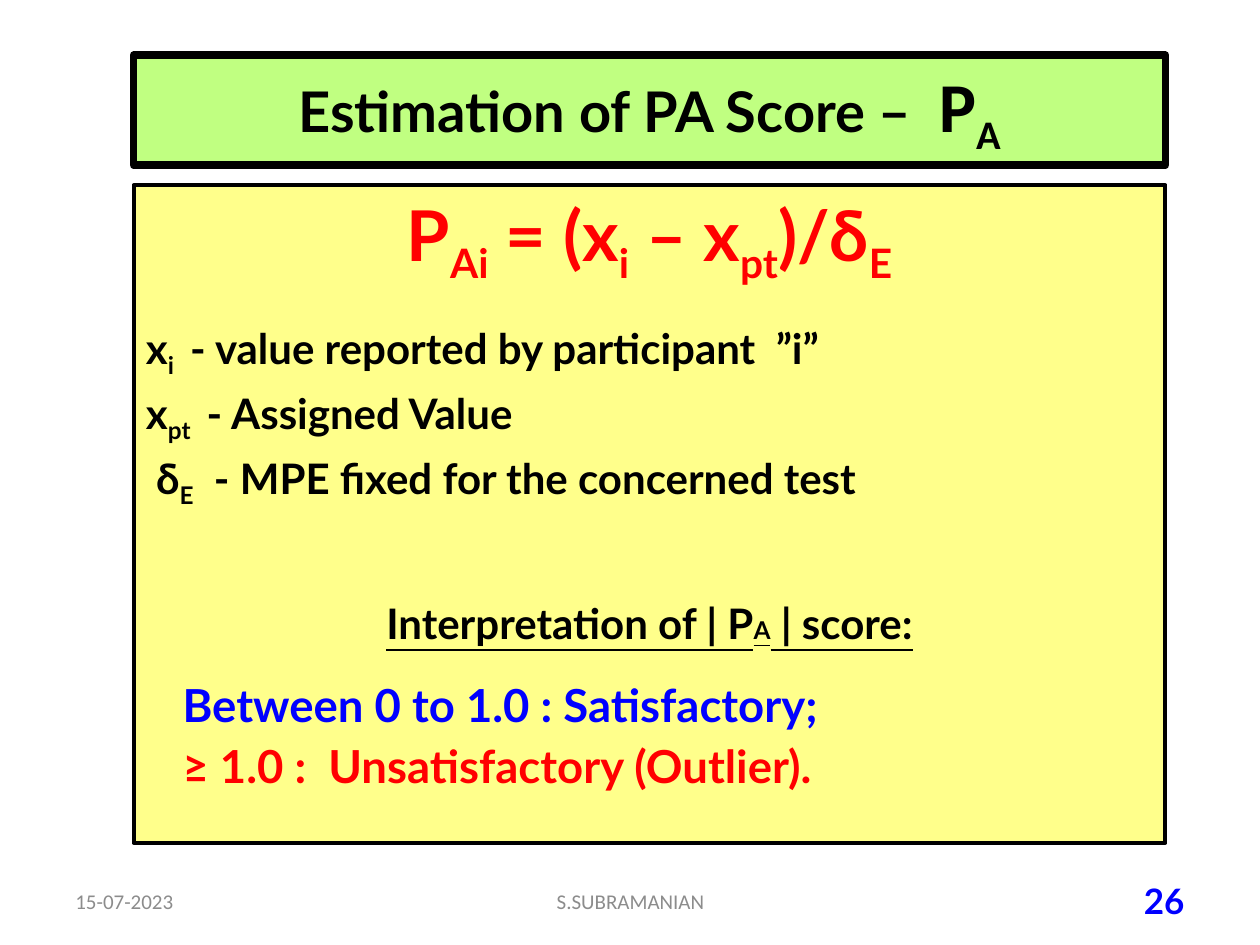
from pptx import Presentation
from pptx import util as u
from pptx.dml.color import RGBColor
from pptx.enum import shapes, text

BLACK, RED, BLUE, GREY = "000000", "FF0000", "0000FF", "8C8C8C"
LEFT, CENTER, RIGHT = text.PP_ALIGN.LEFT, text.PP_ALIGN.CENTER, text.PP_ALIGN.RIGHT


def color(hex_value):
    return RGBColor.from_string(hex_value)


class SlideBuilder:
    """Holds the text style and the current slide."""
    font = "Lato"

    def __init__(self, slide):
        self.slide = slide

    def panel(self, left, top, width, height, fill, line_width):
        shape = self.slide.shapes.add_shape(
            shapes.MSO_SHAPE.RECTANGLE,
            *(u.Inches(v) for v in (left, top, width, height)))
        shape.shadow.inherit = False
        shape.fill.solid()
        shape.fill.fore_color.rgb = color(fill)
        shape.line.color.rgb = color(BLACK)
        shape.line.width = u.Pt(line_width)
        return shape.text_frame

    def label(self, left, width, words, align, **style):
        box = self.slide.shapes.add_textbox(
            u.Inches(left), u.Inches(6.95), u.Inches(width), u.Inches(0.4))
        frame = box.text_frame
        frame.word_wrap = True
        frame.vertical_anchor = text.MSO_ANCHOR.MIDDLE
        self.paragraph(frame, align, [words], **style)

    def paragraph(self, frame, align, parts, before=0, line=None, indent=0, **style):
        """Add a paragraph; each part is a string or a (string, style) pair."""
        first = frame.paragraphs[0]
        para = frame.add_paragraph() if first.runs else first
        para.alignment = align
        para.space_before = u.Pt(before)
        if line:
            para.line_spacing = u.Pt(line)
        if indent:
            para._p.get_or_add_pPr().set("marL", str(u.Inches(indent)))
        for part in parts:
            words, changes = (part, {}) if isinstance(part, str) else part
            self.run(para, words, **{**style, **changes})

    def run(self, para, words, size, ink=BLACK, bold=True, font=None,
            underline=False, sub=False):
        run = para.add_run()
        run.text = words
        run.font.name = font or self.font
        run.font.size = u.Pt(size)
        run.font.bold = bold
        run.font.color.rgb = color(ink)
        if underline:
            run.font.underline = True
        if sub:
            run._r.get_or_add_rPr().set("baseline", "-25000")


def sub(words):
    return words, {"sub": True}


def main():
    prs = Presentation()
    prs.slide_width, prs.slide_height = u.Inches(10), u.Inches(7.5)
    builder = SlideBuilder(prs.slides.add_slide(prs.slide_layouts[6]))

    # Title
    title = builder.panel(1.06, 0.44, 8.19, 0.87, "C0FF81", 4.5)
    title.word_wrap = True
    title.vertical_anchor = text.MSO_ANCHOR.MIDDLE
    symbol = {"size": 40, "font": "Calibri"}
    builder.paragraph(title, CENTER, [
        "Estimation of PA Score –  ", ("P", symbol), ("A", {**symbol, "sub": True})],
        size=32)

    # Formula
    body = builder.panel(1.06, 1.47, 8.19, 5.22, "FFFF8B", 2.25)
    body.word_wrap = True
    body.vertical_anchor = text.MSO_ANCHOR.TOP
    builder.paragraph(body, CENTER, [
        "P", sub("Ai"), " = (x", sub("i"), " – x", sub("pt"), ")/δ", sub("E")],
        size=40, ink=RED)

    # Terms of the formula
    terms = [
        ("x", "i ", " - value reported by participant  ”i”", 20),
        ("x", "pt ", " - Assigned Value", 4.5),
        (" δ", "E", "  - MPE fixed for the concerned test", 4.5),
    ]
    for name, index, meaning, before in terms:
        builder.paragraph(body, LEFT, [name, sub(index), meaning],
                          before=before, size=24)

    # Interpretation
    builder.paragraph(body, CENTER, [
        "Interpretation of | P", ("A", {"size": 14}), " | score:"],
        before=50, size=24, underline=True)
    for verdict, ink, before in [
            ("Between 0 to 1.0 : Satisfactory;", BLUE, 18),
            ("≥ 1.0 :  Unsatisfactory (Outlier).", RED, 5)]:
        builder.paragraph(body, LEFT, [verdict], before=before, line=30,
                          indent=0.29, size=26, ink=ink)

    # Footer
    small = {"size": 12, "ink": GREY, "bold": False, "font": "Calibri"}
    builder.label(0.5, 2.33, "15-07-2023", LEFT, **small)
    builder.label(3.42, 3.17, "S.SUBRAMANIAN", CENTER, **small)
    builder.label(7.17, 2.33, "26", RIGHT, size=20, ink=BLUE)

    prs.save("out.pptx")


if __name__ == "__main__":
    main()
